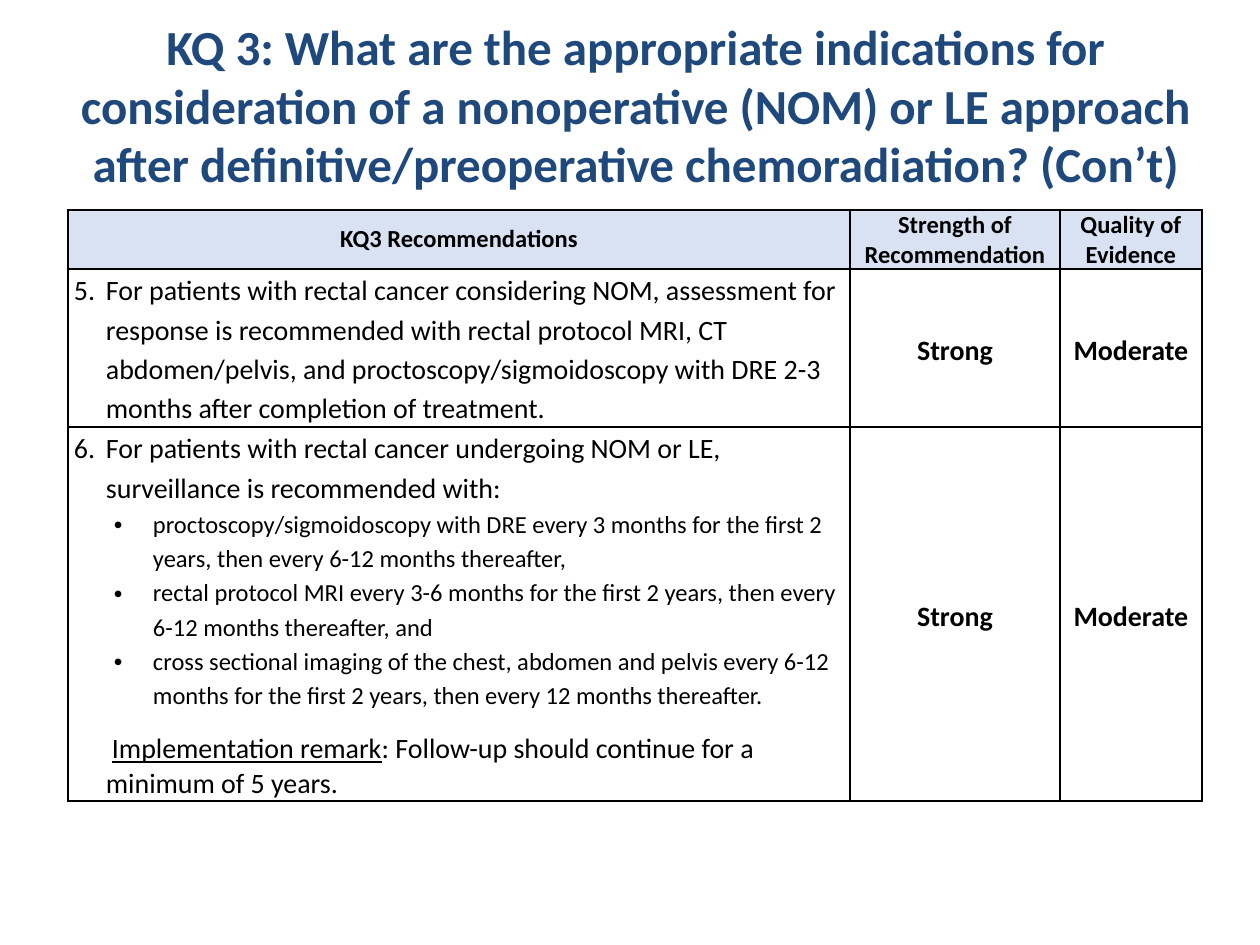
from pptx import Presentation
from pptx.util import Emu, Pt
from pptx.dml.color import RGBColor
from pptx.enum.text import PP_ALIGN, MSO_ANCHOR
from pptx.oxml import parse_xml
from pptx.oxml.ns import nsdecls

NAVY = RGBColor(0x1F, 0x49, 0x7D)
BLACK = RGBColor(0, 0, 0)
PALE_BLUE = RGBColor(0xD9, 0xE2, 0xF3)
SCALE = 914400 // 126

TITLE = ("KQ 3: What are the appropriate indications for consideration of a "
         "nonoperative (NOM) or LE approach after definitive/preoperative "
         "chemoradiation? (Con’t)")
HEADERS = ["KQ3 Recommendations", "Strength of Recommendation", "Quality of Evidence"]
RECOMMENDATIONS = [
    ([("item", "5.\tFor patients with rectal cancer considering NOM, assessment for "
               "response is recommended with rectal protocol MRI, CT abdomen/pelvis, "
               "and proctoscopy/sigmoidoscopy with DRE 2-3 months after completion "
               "of treatment.")],
     "Strong", "Moderate"),
    ([("item", "6.\tFor patients with rectal cancer undergoing NOM or LE, "
               "surveillance is recommended with:"),
      ("bullet", "proctoscopy/sigmoidoscopy with DRE every 3 months for the first "
                 "2 years, then every 6-12 months thereafter,"),
      ("bullet", "rectal protocol MRI every 3-6 months for the first 2 years, then "
                 "every 6-12 months thereafter, and"),
      ("last_bullet", "cross sectional imaging of the chest, abdomen and pelvis every "
                      "6-12 months for the first 2 years, then every 12 months "
                      "thereafter."),
      ("remark", "Implementation remark",
       ": Follow-up should continue for a minimum of 5 years.")],
     "Strong", "Moderate"),
]

COLUMNS = [782, 210, 142]
ROWS = [59, 158, 374]
LEFT, RIGHT = PP_ALIGN.LEFT, PP_ALIGN.CENTER
CENTER = PP_ALIGN.CENTER

BULLET = dict(size=14, align=LEFT, line=1.15, margin=79, indent=-39, bullet="•")
STYLES = {
    "title": dict(size=28, bold=True, color=NAVY, align=CENTER),
    "header": dict(size=14, bold=True, align=CENTER),
    "rating": dict(size=16, bold=True, align=CENTER, line=1.15),
    "item": dict(size=16, align=LEFT, line=1.15, margin=32, indent=-32),
    "bullet": BULLET,
    "last_bullet": {**BULLET, "after": 12},
    "remark": dict(size=16, align=LEFT, margin=32, indent=6, underline_first=True),
}


def px(n):
    return Emu(n * SCALE)


def write(tf, paragraphs):
    for i, (kind, *texts) in enumerate(paragraphs):
        p = tf.paragraphs[0] if i == 0 else tf.add_paragraph()
        style = STYLES[kind]
        p.alignment = style["align"]
        p.line_spacing = style.get("line", 1.0)
        p.space_after = Pt(style.get("after", 0))
        pPr = p._p.get_or_add_pPr()
        pPr.set("marL", str(px(style.get("margin", 0))))
        pPr.set("indent", str(px(style.get("indent", 0))))
        if "bullet" in style:
            pPr.append(parse_xml(f'<a:buFont {nsdecls("a")} typeface="Arial"/>'))
            pPr.append(parse_xml(f'<a:buChar {nsdecls("a")} char="{style["bullet"]}"/>'))
        for j, text in enumerate(texts):
            r = p.add_run()
            r.text = text
            font = {"name": "Calibri", "size": Pt(style["size"]),
                    "bold": style.get("bold", False),
                    "underline": j == 0 and style.get("underline_first", False)}
            for name, value in font.items():
                setattr(r.font, name, value)
            r.font.color.rgb = style.get("color", BLACK)


def fill_cell(cell, paragraphs, anchor, fill=None):
    layout = {"margin_left": px(6), "margin_right": px(6), "margin_top": 0,
              "margin_bottom": 0, "vertical_anchor": anchor}
    for name, value in layout.items():
        setattr(cell, name, value)
    tcPr = cell._tc.get_or_add_tcPr()
    for side in ("lnL", "lnR", "lnT", "lnB"):
        tcPr.append(parse_xml(
            f'<a:{side} {nsdecls("a")} w="{Pt(1)}"><a:solidFill>'
            f'<a:srgbClr val="{BLACK}"/></a:solidFill></a:{side}>'))
    if fill is None:
        cell.fill.background()
    else:
        cell.fill.solid()
        cell.fill.fore_color.rgb = fill
    write(cell.text_frame, paragraphs)


def main():
    prs = Presentation()
    prs.slide_width, prs.slide_height = px(1260), px(945)
    s = prs.slides.add_slide(prs.slide_layouts[6])

    tf = s.shapes.add_textbox(px(32), px(10), px(1207), px(158)).text_frame
    tf.word_wrap = True
    tf.vertical_anchor = MSO_ANCHOR.TOP
    write(tf, [("title", TITLE)])

    table = s.shapes.add_table(len(ROWS), len(COLUMNS), px(68), px(210),
                               px(sum(COLUMNS)), px(sum(ROWS))).table
    table.first_row = table.horz_banding = False
    for column, width in zip(table.columns, COLUMNS):
        column.width = px(width)
    for row, height in zip(table.rows, ROWS):
        row.height = px(height)

    for c, text in enumerate(HEADERS):
        fill_cell(table.cell(0, c), [("header", text)], MSO_ANCHOR.MIDDLE, PALE_BLUE)
    for i, (paragraphs, *ratings) in enumerate(RECOMMENDATIONS, 1):
        fill_cell(table.cell(i, 0), paragraphs, MSO_ANCHOR.TOP)
        for c, rating in enumerate(ratings, 1):
            fill_cell(table.cell(i, c), [("rating", rating)], MSO_ANCHOR.MIDDLE)

    prs.save("out.pptx")


if __name__ == "__main__":
    main()
